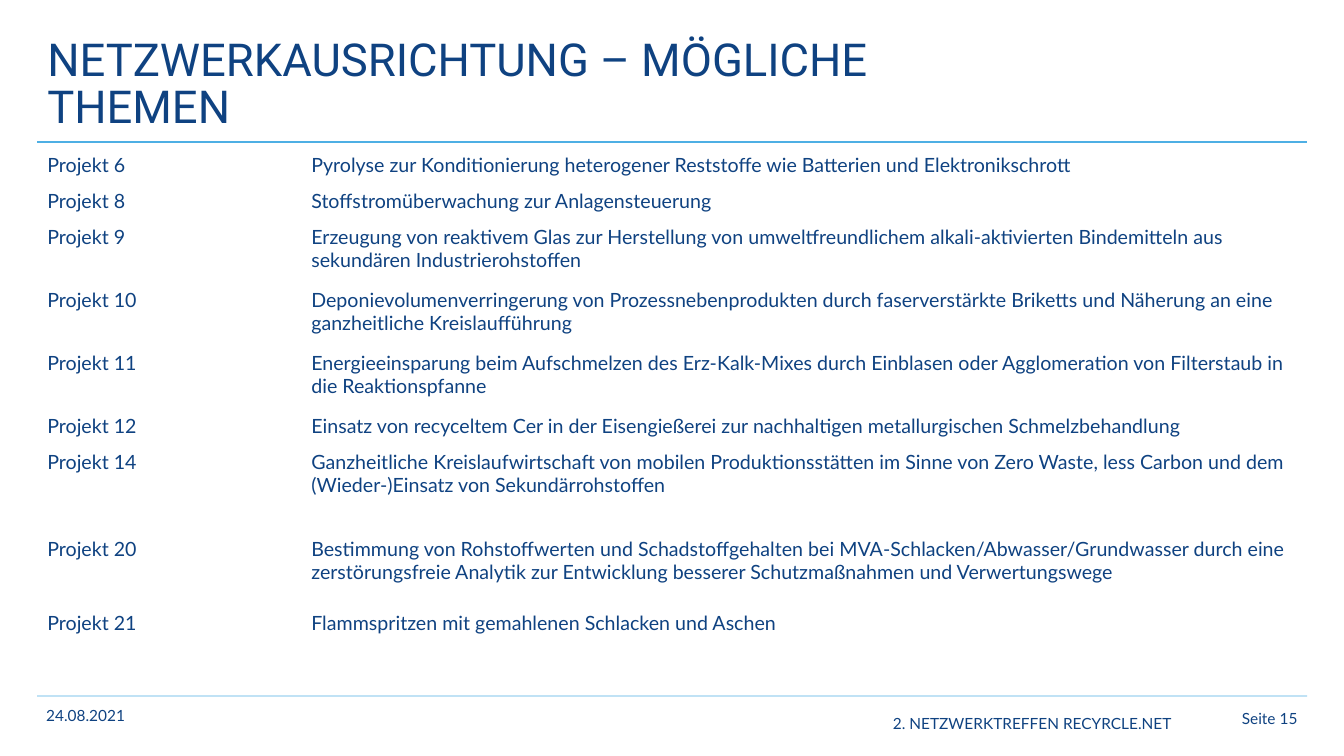
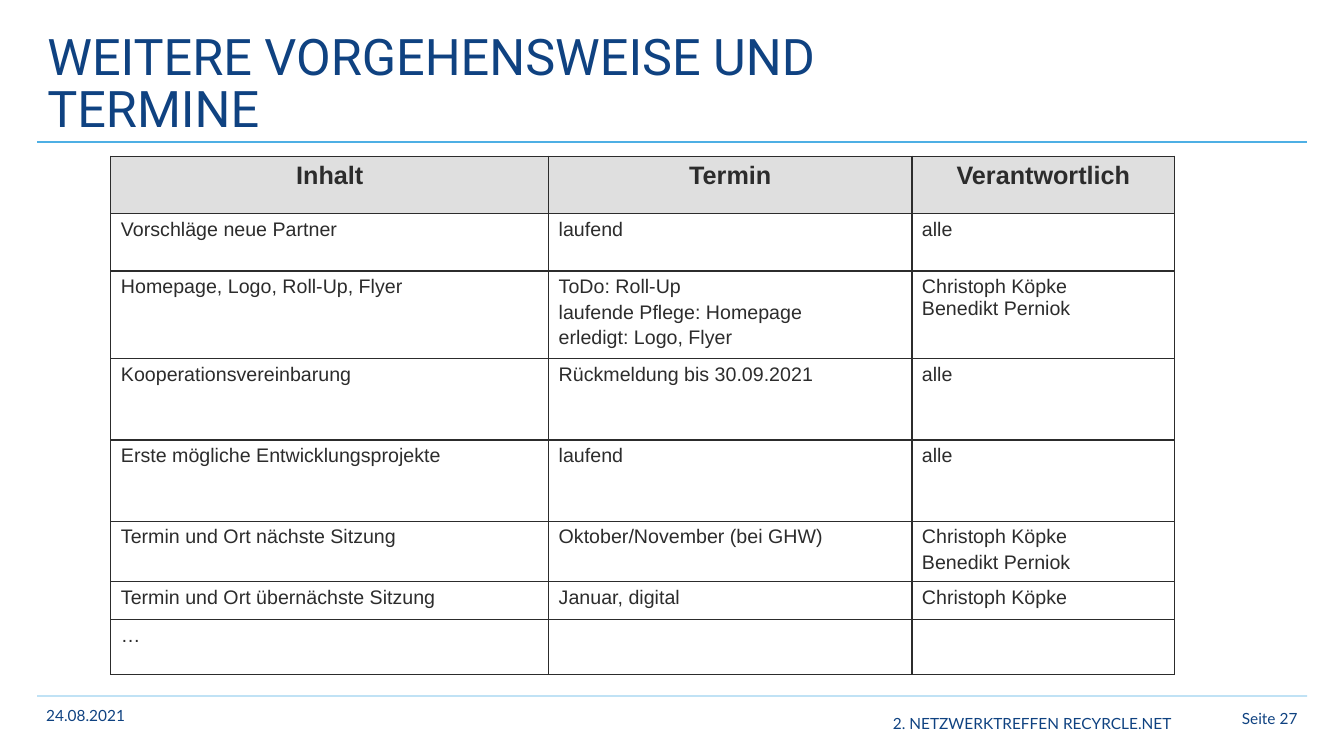
from copy import deepcopy
from dataclasses import dataclass

from lxml import etree
from pptx import Presentation
from pptx.dml.color import RGBColor
from pptx.enum.shapes import MSO_CONNECTOR, MSO_SHAPE
from pptx.enum.text import MSO_ANCHOR, MSO_AUTO_SIZE, PP_ALIGN
from pptx.oxml.ns import qn
from pptx.util import Pt

LEFT, CENTER, RIGHT = PP_ALIGN.LEFT, PP_ALIGN.CENTER, PP_ALIGN.RIGHT
MIDDLE = MSO_ANCHOR.MIDDLE
NO_AUTOFIT = MSO_AUTO_SIZE.NONE
STRAIGHT = MSO_CONNECTOR.STRAIGHT
RECTANGLE = MSO_SHAPE.RECTANGLE


@dataclass(frozen=True)
class Theme:
    navy: str = "0F4281"
    sky: str = "4EAFE4"
    ink: str = "2C2C2C"
    header_gray: str = "DFDFDF"
    white: str = "FFFFFF"
    heading_font: str = "Roboto"
    text_font: str = "Lato"
    schedule_font: str = "Arial"
    small_title: float = 32.4
    large_title: float = 36
    column_head: float = 18
    body: float = 14
    footer: float = 11
    rule: float = 1.5
    border: float = 1


THEME = Theme()
TITLE_BOX = (26.6, 22.3, 651, 78.5)
FRAME_LEFT, FRAME_WIDTH = 26.6, 907.2
TITLE_RULE_TOP, FOOTER_RULE_TOP = 101.5, 496.8
DATE_BOX = (25.9, 502.6, 71.3, 18.7)
EVENT_BOX = (630.7, 508.3, 316.8, 18.7)
PAGE_BOX = (862.6, 503.3, 71.3, 18.7)
PROJECT_BOX = (26.6, 105.8, 911.5, 375)
SCHEDULE_BOX = (79.2, 111.6, 760, 365)

PROJECT_COLUMNS = (188.6, 722.9)
PROJECT_ROWS = (25.7, 25.7, 45, 45, 45, 25.7, 62.1, 53, 45)
PROJECTS = (
    ("Projekt 6", "Pyrolyse zur Konditionierung heterogener Reststoffe wie Batterien und Elektronikschrott"),
    ("Projekt 8", "Stoffstromüberwachung zur Anlagensteuerung"),
    ("Projekt 9", "Erzeugung von reaktivem Glas zur Herstellung von umweltfreundlichem "
     "alkali-aktivierten Bindemitteln aus sekundären Industrierohstoffen"),
    ("Projekt 10", "Deponievolumenverringerung von Prozessnebenprodukten durch faserverstärkte "
     "Briketts und Näherung an eine ganzheitliche Kreislaufführung"),
    ("Projekt 11", "Energieeinsparung beim Aufschmelzen des Erz-Kalk-Mixes durch Einblasen oder "
     "Agglomeration von Filterstaub in die Reaktionspfanne"),
    ("Projekt 12", "Einsatz von recyceltem Cer in der Eisengießerei zur nachhaltigen "
     "metallurgischen Schmelzbehandlung"),
    ("Projekt 14", "Ganzheitliche Kreislaufwirtschaft von mobilen Produktionsstätten im Sinne von "
     "Zero Waste, less Carbon und dem (Wieder-)Einsatz von Sekundärrohstoffen"),
    ("Projekt 20", "Bestimmung von Rohstoffwerten und Schadstoffgehalten bei "
     "MVA-Schlacken/Abwasser/Grundwasser durch eine zerstörungsfreie Analytik zur Entwicklung "
     "besserer Schutzmaßnahmen und Verwertungswege"),
    ("Projekt 21", "Flammspritzen mit gemahlenen Schlacken und Aschen"),
)

SCHEDULE_COLUMNS = (312.7, 259.5, 187.8)
SCHEDULE_ROWS = (41, 41, 60, 58, 58, 41, 27, 39)
SCHEDULE = (
    ("Inhalt", "Termin", "Verantwortlich"),
    ("Vorschläge neue Partner", "laufend", "alle"),
    ("Homepage, Logo, Roll-Up, Flyer",
     "ToDo: Roll-Up\nlaufende Pflege: Homepage\nerledigt: Logo, Flyer",
     "Christoph Köpke\vBenedikt Perniok"),
    ("Kooperationsvereinbarung", "Rückmeldung bis 30.09.2021", "alle"),
    ("Erste mögliche Entwicklungsprojekte", "laufend", "alle"),
    ("Termin und Ort nächste Sitzung", "Oktober/November (bei GHW)",
     "Christoph Köpke\nBenedikt Perniok"),
    ("Termin und Ort übernächste Sitzung", "Januar, digital", "Christoph Köpke"),
    ("…", "", ""),
)


def rgb(color):
    return RGBColor.from_string(color)


def points(box):
    return [Pt(length) for length in box]


def apply_formats(target, formats):
    for name, value in formats.items():
        setattr(target, name, value)


def write_text(frame, text, font, size, color, bold=False, gap=0, **paragraph_formats):
    frame.text = text
    for index, paragraph in enumerate(frame.paragraphs):
        apply_formats(paragraph, paragraph_formats)
        if index and gap:
            paragraph.space_before = Pt(gap)
        for run in paragraph.runs:
            apply_formats(run.font, {"name": font, "size": Pt(size), "bold": bold})
            run.font.color.rgb = rgb(color)
        for line_break in paragraph._p.findall(qn("a:br")):
            line_break.append(deepcopy(paragraph.runs[0]._r.rPr))


def add_footer_text(slide, box, text, **paragraph_formats):
    frame = slide.shapes.add_textbox(*points(box)).text_frame
    frame.word_wrap = True
    write_text(frame, text, THEME.text_font, THEME.footer, THEME.navy, **paragraph_formats)


def add_footer(slide, page):
    rule = slide.shapes.add_shape(
        RECTANGLE, *points((FRAME_LEFT, FOOTER_RULE_TOP, FRAME_WIDTH, 0.7)))
    rule.shadow.inherit = False
    rule.fill.solid()
    rule.fill.fore_color.rgb = rgb(THEME.sky)
    rule.line.fill.background()
    add_footer_text(slide, DATE_BOX, "24.08.2021", line_spacing=0.9)
    add_footer_text(slide, EVENT_BOX, "2. NETZWERKTREFFEN RECYRCLE.NET", line_spacing=0.9)
    add_footer_text(slide, PAGE_BOX, f"Seite {page}", alignment=RIGHT)


def add_title(slide, box, text, size):
    title = slide.shapes.title
    apply_formats(title, dict(zip(("left", "top", "width", "height"), points(box))))
    apply_formats(title.text_frame, {
        "word_wrap": True, "auto_size": NO_AUTOFIT, "vertical_anchor": MIDDLE})
    write_text(title.text_frame, text, THEME.heading_font, size, THEME.navy,
               alignment=LEFT, line_spacing=0.85)
    rule = slide.shapes.add_connector(
        STRAIGHT, *points((FRAME_LEFT, TITLE_RULE_TOP,
                           FRAME_LEFT + FRAME_WIDTH, TITLE_RULE_TOP)))
    rule.line.color.rgb = rgb(THEME.sky)
    rule.line.width = Pt(THEME.rule)
    etree.SubElement(rule._element.spPr, qn("a:effectLst"))


def add_content_slide(deck, title, title_size, page):
    slide = deck.slides.add_slide(deck.slide_layouts.get_by_name("Title Only"))
    add_title(slide, TITLE_BOX, title, title_size)
    add_footer(slide, page)
    return slide


def set_borders(cell, color):
    properties = cell._tc.get_or_add_tcPr()
    for index, side in enumerate(("lnL", "lnR", "lnT", "lnB")):
        border = etree.Element(qn(f"a:{side}"), w=str(Pt(THEME.border)))
        fill = etree.SubElement(border, qn("a:solidFill"))
        etree.SubElement(fill, qn("a:srgbClr"), val=color)
        properties.insert(index, border)


def add_grid(slide, box, columns, heights, rows, border, cell_style):
    table = slide.shapes.add_table(len(rows), len(columns), *points(box)).table
    apply_formats(table, {"first_row": False, "horz_banding": False})
    for column, width in zip(table.columns, columns):
        column.width = Pt(width)
    for row_index, (row, height, texts) in enumerate(zip(table.rows, heights, rows)):
        row.height = Pt(height)
        fill, text_style = cell_style(row_index)
        for cell, text in zip(row.cells, texts):
            cell.fill.solid()
            cell.fill.fore_color.rgb = rgb(fill)
            set_borders(cell, border)
            write_text(cell.text_frame, text, **text_style)


def project_style(row_index):
    return THEME.white, {"font": THEME.text_font, "size": THEME.body, "color": THEME.navy}


def schedule_style(row_index):
    style = {"font": THEME.schedule_font, "color": THEME.ink}
    if row_index == 0:
        return THEME.header_gray, {
            **style, "size": THEME.column_head, "bold": True, "alignment": CENTER}
    return THEME.white, {**style, "size": THEME.body, "gap": 2.5}


def add_project_slide(deck):
    slide = add_content_slide(
        deck, "NETZWERKAUSRICHTUNG – MÖGLICHE THEMEN", THEME.small_title, 15)
    add_grid(slide, PROJECT_BOX, PROJECT_COLUMNS, PROJECT_ROWS, PROJECTS,
             THEME.white, project_style)


def add_schedule_slide(deck):
    slide = add_content_slide(
        deck, "WEITERE VORGEHENSWEISE UND TERMINE", THEME.large_title, 27)
    add_grid(slide, SCHEDULE_BOX, SCHEDULE_COLUMNS, SCHEDULE_ROWS, SCHEDULE,
             THEME.ink, schedule_style)


def main():
    deck = Presentation()
    apply_formats(deck, {"slide_width": Pt(960), "slide_height": Pt(540)})
    add_project_slide(deck)
    add_schedule_slide(deck)
    deck.save("out.pptx")


if __name__ == "__main__":
    main()
